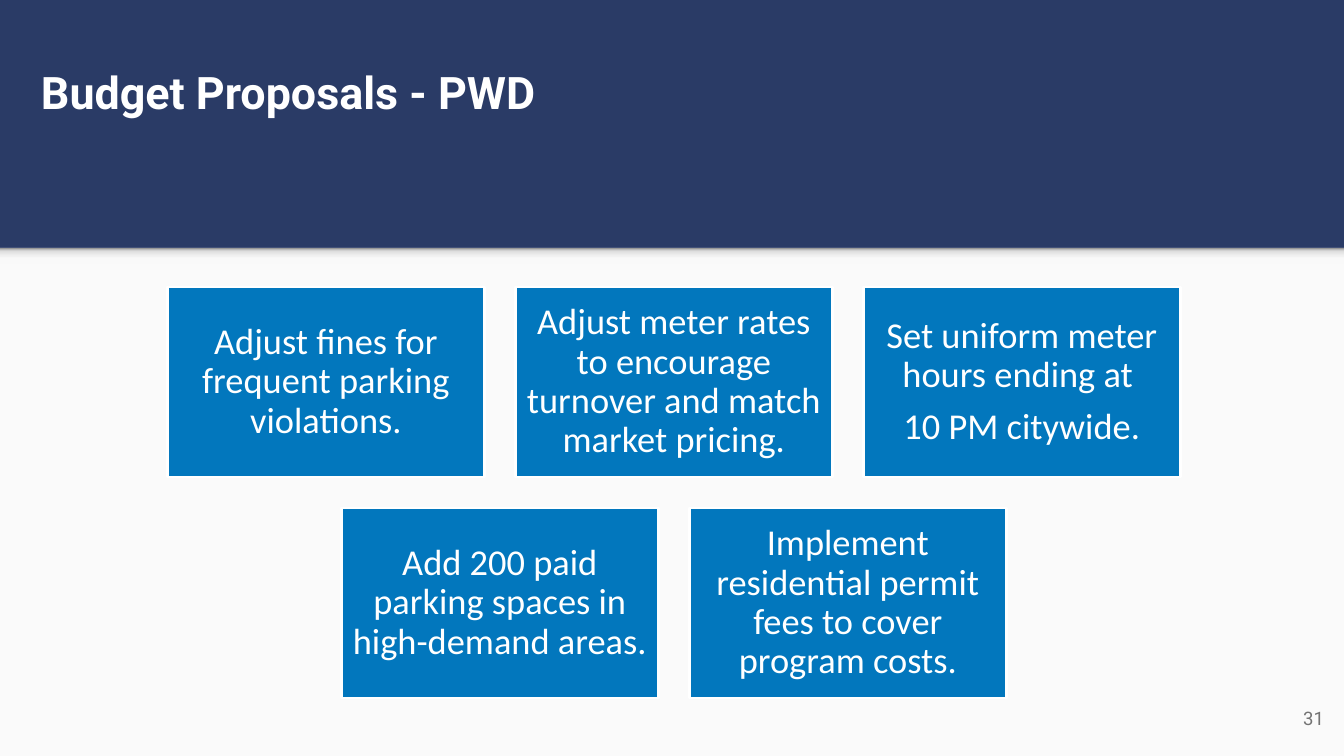
from copy import deepcopy

from pptx import Presentation
from pptx.dml.color import RGBColor
from pptx.enum.shapes import MSO_SHAPE
from pptx.enum.text import MSO_ANCHOR, MSO_AUTO_SIZE, PP_ALIGN
from pptx.util import Emu, Pt

SCALE = 914400 / 100.8  # EMU in one px
WIDTH, HEIGHT = 1344, 756

NAVY = RGBColor(0x2A, 0x3B, 0x66)
PAPER = RGBColor(0xFA, 0xFA, 0xFA)
BLUE = RGBColor(0x02, 0x77, 0xBD)
WHITE = RGBColor(0xFF, 0xFF, 0xFF)
GREY = RGBColor(0x73, 0x73, 0x73)
SHADE_STOPS = [
    (0, RGBColor(0xF9, 0xF9, 0xF9)),
    (0.36, RGBColor(0xF9, 0xF9, 0xF9)),
    (0.8, RGBColor(0xDE, 0xDE, 0xDE)),
    (1, RGBColor(0x99, 0x99, 0x99)),
]

BAND_BOTTOM = 248
CARD_W, CARD_H = 317, 190
CARD_GAP_X, CARD_GAP_Y = 31, 31
CARDS_TOP, CARDS_CENTRE = 287, 674
PROPOSAL_ROWS = [
    [
        ["Adjust fines for frequent parking violations."],
        ["Adjust meter rates to encourage turnover and match market pricing."],
        ["Set uniform meter hours ending at ", "10 PM citywide."],
    ],
    [
        ["Add 200 paid parking spaces in high-demand areas."],
        ["Implement residential permit fees to cover program costs."],
    ],
]


def px(n):
    return Emu(round(n * SCALE))


def set_text(tf, paragraphs, font, size, color, align, anchor, inset,
             bold=False, line_spacing=None, gap=0):
    tf.word_wrap = True
    tf.auto_size = MSO_AUTO_SIZE.NONE
    tf.vertical_anchor = anchor
    tf.margin_left = tf.margin_right = px(inset)
    tf.margin_top = tf.margin_bottom = px(inset)
    for i, text in enumerate(paragraphs):
        p = tf.paragraphs[0] if i == 0 else tf.add_paragraph()
        p.text = text
        p.alignment = align
        p.line_spacing = line_spacing
        p.space_before = Pt(gap if i else 0)
        p.font.name = font
        p.font.size = Pt(size)
        p.font.bold = bold
        p.font.color.rgb = color


def add_rect(s, x, y, w, h, fill=None):
    sp = s.shapes.add_shape(MSO_SHAPE.RECTANGLE, px(x), px(y), px(w), px(h))
    sp.shadow.inherit = False
    sp.line.fill.background()
    if fill is not None:
        sp.fill.solid()
        sp.fill.fore_color.rgb = fill
    return sp


def add_shade(s, x, y, w, h):
    sp = add_rect(s, x, y, w, h)
    sp.fill.gradient()
    sp.fill.gradient_angle = 90
    # The default gradient has two stops; extend it to four
    stop_list = sp._element.spPr.xpath("a:gradFill/a:gsLst")[0]
    while len(stop_list) < len(SHADE_STOPS):
        stop_list.append(deepcopy(stop_list[0]))
    for stop, (position, color) in zip(sp.fill.gradient_stops, SHADE_STOPS):
        stop.position = position
        stop.color.rgb = color


def add_title(s, text):
    sp = s.shapes.title
    sp.left, sp.top, sp.width, sp.height = px(31), px(16), px(1209), px(113)
    set_text(sp.text_frame, [text], "Roboto", 32, WHITE, PP_ALIGN.LEFT,
             MSO_ANCHOR.BOTTOM, 10, bold=True)


def add_page_number(s, number):
    sp = s.shapes.add_textbox(px(1253), px(690), px(81), px(57))
    set_text(sp.text_frame, [number], "Roboto", 13.3, GREY, PP_ALIGN.RIGHT,
             MSO_ANCHOR.MIDDLE, 10)


def add_card(s, x, y, paragraphs):
    sp = add_rect(s, x, y, CARD_W, CARD_H, BLUE)
    sp.line.color.rgb = WHITE
    sp.line.width = Pt(2)
    set_text(sp.text_frame, paragraphs, "Calibri", 26, WHITE, PP_ALIGN.CENTER,
             MSO_ANCHOR.MIDDLE, 11, line_spacing=0.9, gap=9)


def add_card_rows(s, rows):
    for i, row in enumerate(rows):
        row_w = len(row) * (CARD_W + CARD_GAP_X) - CARD_GAP_X
        left = CARDS_CENTRE - row_w / 2
        y = CARDS_TOP + i * (CARD_H + CARD_GAP_Y)
        for j, paragraphs in enumerate(row):
            add_card(s, left + j * (CARD_W + CARD_GAP_X), y, paragraphs)


def main():
    prs = Presentation()
    prs.slide_width, prs.slide_height = px(WIDTH), px(HEIGHT)
    s = prs.slides.add_slide(prs.slide_layouts[5])

    # Navy background with a light lower panel and its top shade
    s.background.fill.solid()
    s.background.fill.fore_color.rgb = NAVY
    add_rect(s, 0, BAND_BOTTOM, WIDTH, HEIGHT - BAND_BOTTOM, PAPER)
    add_shade(s, 0, BAND_BOTTOM, WIDTH, 16)

    # Title, proposals and page number
    add_title(s, "Budget Proposals - PWD")
    add_card_rows(s, PROPOSAL_ROWS)
    add_page_number(s, "31")

    prs.save("out.pptx")


if __name__ == "__main__":
    main()
